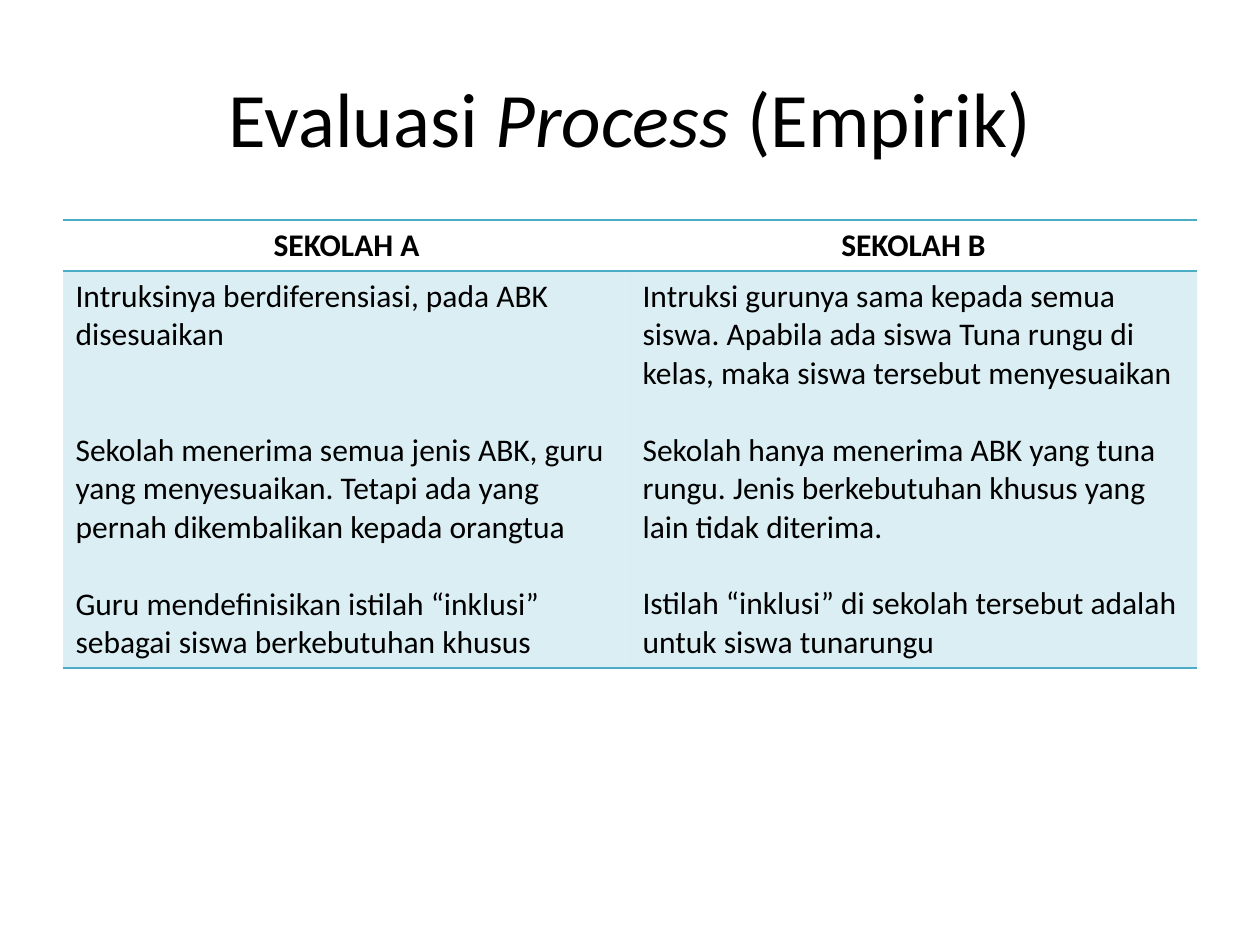
import dataclasses
import typing

import lxml.etree
import pptx
import pptx.dml.color
import pptx.enum.text
import pptx.oxml.ns
import pptx.util

PX = 914400 / 126
ACCENT = "4BACC6"
LINE_PT = 22
FONT = {"name": "Calibri", "size": pptx.util.Pt(18)}
CENTER = pptx.enum.text.PP_ALIGN.CENTER
LEFT = pptx.enum.text.PP_ALIGN.LEFT
PLAIN_STYLE = "{2D5ABB26-0587-4C30-8999-92F81FD0307C}"


@dataclasses.dataclass(frozen=True)
class Para:
    text: str
    gap_lines: int = 0


@dataclasses.dataclass(frozen=True)
class School:
    name: str
    findings: tuple[Para, ...]


SCHOOLS = (
    School("SEKOLAH A", (
        Para("Intruksinya berdiferensiasi, pada ABK disesuaikan"),
        Para("Sekolah menerima semua jenis ABK, guru yang menyesuaikan. "
             "Tetapi ada yang pernah dikembalikan kepada orangtua", 2),
        Para("Guru mendefinisikan istilah “inklusi” sebagai siswa berkebutuhan khusus", 1),
    )),
    School("SEKOLAH B", (
        Para("Intruksi gurunya sama kepada semua siswa. Apabila ada siswa Tuna rungu "
             "di kelas, maka siswa tersebut menyesuaikan"),
        Para("Sekolah hanya menerima ABK yang tuna rungu. Jenis berkebutuhan khusus "
             "yang lain tidak diterima.", 1),
        Para("Istilah “inklusi” di sekolah tersebut adalah untuk siswa tunarungu", 1),
    )),
)


def px(n: int) -> int:
    return round(n * PX)


def rgb(value: str) -> pptx.dml.color.RGBColor:
    return pptx.dml.color.RGBColor.from_string(value)


def add_run(p: typing.Any, text: str, **formats: typing.Any) -> None:
    r = p.add_run()
    r.text = text
    for key, value in (FONT | formats).items():
        setattr(r.font, key, value)
    r.font.color.rgb = rgb("000000")


def add_child(parent: typing.Any, tag: str, **attrs: str) -> typing.Any:
    return lxml.etree.SubElement(parent, pptx.oxml.ns.qn(tag), attrs)


def set_borders(cell: typing.Any, sides: str) -> None:
    tc_pr = cell._tc.get_or_add_tcPr()
    for side in sides:
        ln = add_child(tc_pr, f"a:ln{side}", w=str(pptx.util.Pt(1)))
        add_child(add_child(ln, "a:solidFill"), "a:srgbClr", val=ACCENT)


def fill_cell(cell: typing.Any, paras: tuple[Para, ...], align: typing.Any, bold: bool) -> None:
    tf = cell.text_frame
    for i, para in enumerate(paras):
        p = tf.add_paragraph() if i else tf.paragraphs[0]
        p.alignment = align
        if para.gap_lines:
            p.space_before = pptx.util.Pt(para.gap_lines * LINE_PT)
        add_run(p, para.text, bold=bold)


def add_title(s: typing.Any) -> None:
    tf = s.shapes.add_textbox(px(63), px(38), px(1134), px(157)).text_frame
    tf.word_wrap = True
    tf.vertical_anchor = pptx.enum.text.MSO_ANCHOR.MIDDLE
    p = tf.paragraphs[0]
    p.alignment = CENTER
    for text, italic in (("Evaluasi ", False), ("Process ", True), ("(Empirik)", False)):
        add_run(p, text, size=pptx.util.Pt(44), italic=italic)


def add_comparison(s: typing.Any) -> None:
    frame = s.shapes.add_table(2, len(SCHOOLS), px(63), px(220), px(1134), px(448))
    table = frame.table
    table.first_row = table.horz_banding = False
    table._tbl.tblPr.find(pptx.oxml.ns.qn("a:tableStyleId")).text = PLAIN_STYLE
    for row, height in zip(table.rows, (51, 397)):
        row.height = px(height)
    for col, school in enumerate(SCHOOLS):
        head, body = table.cell(0, col), table.cell(1, col)
        fill_cell(head, (Para(school.name),), CENTER, True)
        fill_cell(body, school.findings, LEFT, False)
        set_borders(head, "TB")
        set_borders(body, "TB")
        head.fill.background()
        body.fill.solid()
        body.fill.fore_color.rgb = rgb(ACCENT)
        color = body._tc.tcPr.find(pptx.oxml.ns.qn("a:solidFill"))[0]
        add_child(color, "a:alpha", val="20000")


def main() -> None:
    """Build the slide comparing the two schools."""
    prs = pptx.Presentation()
    prs.slide_width, prs.slide_height = px(1260), px(945)
    s = prs.slides.add_slide(prs.slide_layouts[6])
    add_title(s)
    add_comparison(s)
    prs.save("out.pptx")


if __name__ == "__main__":
    main()
